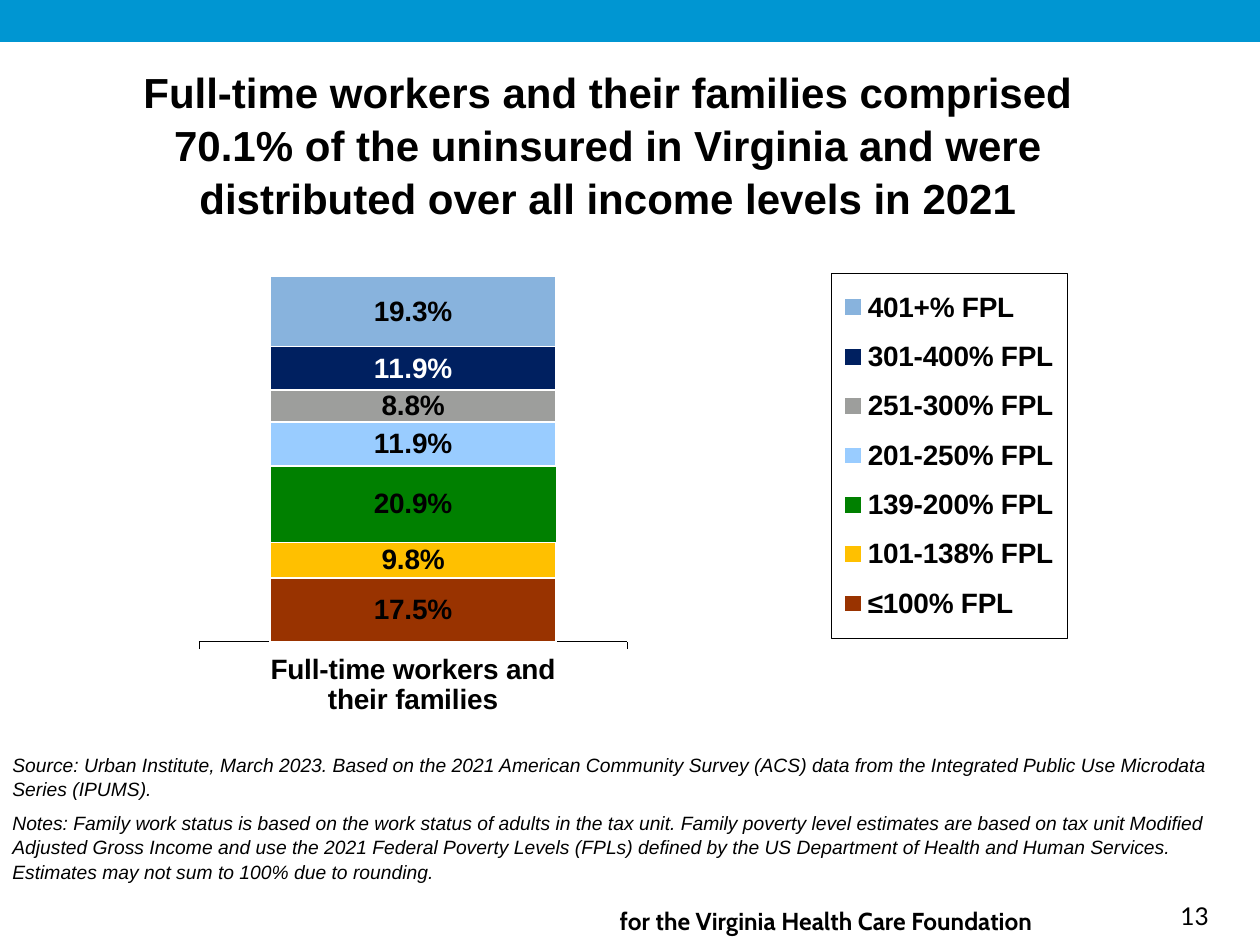
from lxml import etree
from pptx import Presentation
from pptx.chart.data import CategoryChartData
from pptx.dml.color import RGBColor
from pptx.enum.chart import XL_CHART_TYPE, XL_LABEL_POSITION, XL_LEGEND_POSITION, XL_TICK_LABEL_POSITION, XL_TICK_MARK
from pptx.enum.shapes import MSO_SHAPE
from pptx.enum.text import PP_ALIGN
from pptx.oxml.ns import qn
from pptx.util import Pt

STACKED = XL_CHART_TYPE.COLUMN_STACKED
LABEL_CENTER = XL_LABEL_POSITION.CENTER
LEGEND_RIGHT = XL_LEGEND_POSITION.RIGHT
LABELS_LOW = XL_TICK_LABEL_POSITION.LOW
TICK_OUTSIDE, TICK_NONE = XL_TICK_MARK.OUTSIDE, XL_TICK_MARK.NONE
RECTANGLE = MSO_SHAPE.RECTANGLE
LEFT, CENTER = PP_ALIGN.LEFT, PP_ALIGN.CENTER

BLACK, WHITE, BANNER_BLUE = "000000", "FFFFFF", "0096D2"

TITLE = ("Full-time workers and their families comprised 70.1% of the uninsured "
         "in Virginia and were distributed over all income levels in 2021")
SOURCE = ("Source: Urban Institute, March 2023. Based on the 2021 American Community Survey (ACS) "
          "data from the Integrated Public Use Microdata Series (IPUMS).")
NOTES = ("Notes: Family work status is based on the work status of adults in the tax unit. "
         "Family poverty level estimates are based on tax unit Modified Adjusted Gross Income "
         "and use the 2021 Federal Poverty Levels (FPLs) defined by the US Department of Health "
         "and Human Services. Estimates may not sum to 100% due to rounding.")

# Income level, share, fill, label colour, outline width
INCOME_LEVELS = [
    ("≤100% FPL", 0.175, "993300", BLACK, 1),
    ("101-138% FPL", 0.098, "FFC000", BLACK, 1),
    ("139-200% FPL", 0.209, "008000", BLACK, 0.25),
    ("201-250% FPL", 0.119, "99CCFF", BLACK, 1),
    ("251-300% FPL", 0.088, "9D9E9C", BLACK, 1),
    ("301-400% FPL", 0.119, "002060", WHITE, 1),
    ("401+% FPL", 0.193, "88B3DD", BLACK, 1),
]


def color(hex_value):
    return RGBColor.from_string(hex_value)


def set_font(font, size, name, hex_value=BLACK, bold=False, italic=False):
    font.size, font.name = Pt(size), name
    font.bold, font.italic = bold, italic
    font.color.rgb = color(hex_value)


def add_text(slide, box, texts, size, name, align=LEFT, line_spacing=None,
             space_between=0, bold=False, italic=False):
    frame = slide.shapes.add_textbox(*map(Pt, box)).text_frame
    frame.word_wrap = True
    for index, text in enumerate(texts):
        paragraph = frame.add_paragraph() if index else frame.paragraphs[0]
        paragraph.text = text
        paragraph.alignment = align
        if line_spacing:
            paragraph.line_spacing = line_spacing
        if index:
            paragraph.space_before = Pt(space_between)
        set_font(paragraph.font, size, name, bold=bold, italic=italic)


def add_banner(slide):
    banner = slide.shapes.add_shape(RECTANGLE, 0, 0, Pt(720), Pt(24))
    banner.shadow.inherit = False
    banner.fill.solid()
    banner.fill.fore_color.rgb = color(BANNER_BLUE)
    banner.line.fill.background()


def make_layout(x, y, width, height, inner=False):
    """Return a manual chart layout, in fractions of the chart area."""
    layout = etree.Element(qn("c:layout"))
    manual = etree.SubElement(layout, qn("c:manualLayout"))
    settings = [("layoutTarget", "inner")] if inner else []
    settings += [("xMode", "edge"), ("yMode", "edge"),
                 ("x", x), ("y", y), ("w", width), ("h", height)]
    for tag, value in settings:
        etree.SubElement(manual, qn(f"c:{tag}")).set("val", str(value))
    return layout


def place_plot(chart):
    plot_area = chart.element.chart.plotArea
    for old_layout in plot_area.findall(qn("c:layout")):
        plot_area.remove(old_layout)
    plot_area.insert(0, make_layout(0.144, 0.035, 0.366, 0.751, inner=True))


def add_legend(chart):
    chart.has_legend = True
    legend = chart.legend
    legend.position = LEGEND_RIGHT
    legend.include_in_layout = False
    set_font(legend.font, 16, "Arial", bold=True)
    element = legend._element
    for old_layout in element.findall(qn("c:layout")):
        element.remove(old_layout)
    element.find(qn("c:legendPos")).addnext(make_layout(0.684, 0.028, 0.202, 0.75))
    properties = etree.Element(qn("c:spPr"))
    line = etree.SubElement(properties, qn("a:ln"), w=str(Pt(0.25)))
    fill = etree.SubElement(line, qn("a:solidFill"))
    etree.SubElement(fill, qn("a:srgbClr"), val=BLACK)
    element.find(qn("c:txPr")).addprevious(properties)


def format_axes(chart):
    category_axis = chart.category_axis
    category_axis.major_tick_mark = TICK_OUTSIDE
    category_axis.minor_tick_mark = TICK_NONE
    category_axis.tick_label_position = LABELS_LOW
    category_axis.format.line.color.rgb = color(BLACK)
    category_axis.format.line.width = Pt(0.28)
    value_axis = chart.value_axis
    value_axis.minimum_scale, value_axis.maximum_scale = 0, 1
    value_axis.major_unit = 0.25
    value_axis.has_major_gridlines = False
    value_axis.visible = False


def format_series(series, fill, label_color, outline):
    series.format.fill.solid()
    series.format.fill.fore_color.rgb = color(fill)
    series.format.line.color.rgb = color(WHITE)
    series.format.line.width = Pt(outline)
    labels = series.data_labels
    labels.show_value = True
    labels.position = LABEL_CENTER
    labels.number_format, labels.number_format_is_linked = "0.0%", False
    set_font(labels.font, 16, "Arial", label_color, bold=True)


def add_income_chart(slide):
    data = CategoryChartData(number_format="0.0%")
    data.categories = ["Full-time workers and\ntheir families"]
    for name, share, *_ in INCOME_LEVELS:
        data.add_series(name, [share])
    box = map(Pt, (17.28, 148.32, 668.88, 277.92))
    chart = slide.shapes.add_chart(STACKED, *box, data).chart
    chart.has_title = False
    set_font(chart.font, 16, "Arial", bold=True)
    plot = chart.plots[0]
    plot.gap_width, plot.overlap = 50, 100
    plot.vary_by_categories = False
    for series, (_, _, fill, label_color, outline) in zip(plot.series, INCOME_LEVELS):
        format_series(series, fill, label_color, outline)
    format_axes(chart)
    place_plot(chart)
    add_legend(chart)


def main():
    presentation = Presentation()
    presentation.slide_width, presentation.slide_height = Pt(720), Pt(540)
    slide = presentation.slides.add_slide(presentation.slide_layouts[6])
    add_banner(slide)
    add_text(slide, (667.44, 511.2, 52.56, 24.48), ["13"], 14, "Lato")
    add_income_chart(slide)
    add_text(slide, (40.32, 33.12, 614.16, 94.32), [TITLE], 24, "Arial",
             align=CENTER, line_spacing=1.05, bold=True)
    add_text(slide, (0, 426.24, 720, 80.64), [SOURCE, NOTES], 11, "Arial",
             line_spacing=1.05, space_between=5.5, italic=True)
    add_text(slide, (347.04, 514.08, 349.2, 18.72),
             ["for the Virginia Health Care Foundation"], 14, "Cabin", bold=True)
    presentation.save("out.pptx")


if __name__ == "__main__":
    main()
